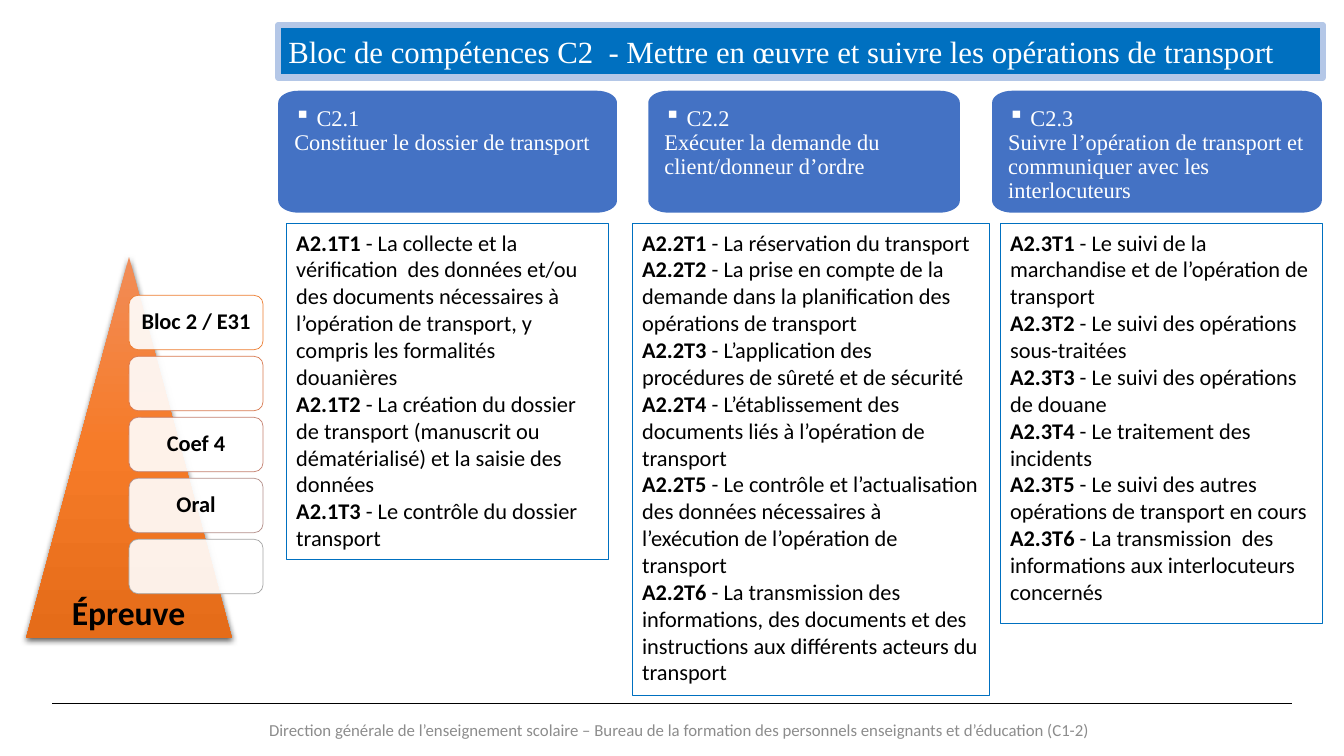
import math

from lxml import etree
from pptx import Presentation
from pptx.dml.color import RGBColor
from pptx.enum import shapes, text
from pptx.oxml import parse_xml
from pptx.oxml.ns import nsdecls, qn
from pptx.util import Inches, Pt

TITLE = "Bloc de compétences C2  - Mettre en œuvre et suivre les opérations de transport"
FOOTER = ("Direction générale de l’enseignement scolaire – Bureau de la formation "
          "des personnels enseignants et d’éducation (C1-2)")
# code, heading, card (left, width), task box (left, width, height), tasks
COLUMNS = [
    ("2.1", "Constituer le dossier de transport", (2.76, 3.36), (2.84, 3.2, 3.33), [
        "La collecte et la vérification  des données et/ou des documents nécessaires à "
        "l’opération de transport, y compris les formalités douanières",
        "La création du dossier de transport (manuscrit ou dématérialisé) et la saisie des données",
        "Le contrôle du dossier transport",
    ]),
    ("2.2", "Exécuter la demande du client/donneur d’ordre", (6.43, 3.09), (6.27, 3.54, 4.68), [
        "La réservation du transport",
        "La prise en compte de la demande dans la planification des opérations de transport",
        "L’application des procédures de sûreté et de sécurité",
        "L’établissement des documents liés à l’opération de transport",
        "Le contrôle et l’actualisation des données nécessaires à l’exécution de "
        "l’opération de transport",
        "La transmission des informations, des documents et des instructions aux "
        "différents acteurs du transport",
    ]),
    ("2.3", "Suivre l’opération de transport et communiquer avec les interlocuteurs",
     (9.84, 3.27), (9.92, 3.2, 3.97), [
        "Le suivi de la marchandise et de l’opération de transport",
        "Le suivi des opérations sous-traitées",
        "Le suivi des opérations de douane",
        "Le traitement des incidents",
        "Le suivi des autres opérations de transport en cours",
        "La transmission  des informations aux interlocuteurs concernés",
    ]),
]
BADGES = [
    ("Bloc 2 / E31", RGBColor(0xED, 0x7D, 0x31)),
    ("", RGBColor(0xD8, 0x7A, 0x51)),
    ("Coef 4", RGBColor(0xC4, 0x81, 0x70)),
    ("Oral", RGBColor(0xB4, 0x90, 0x8B)),
    ("", RGBColor(0xA5, 0xA5, 0xA5)),
]
BLACK = RGBColor(0, 0, 0)
WHITE = RGBColor(0xFF, 0xFF, 0xFF)
GREY = RGBColor(0x8C, 0x8C, 0x8C)
CARD_BLUE = RGBColor(0x44, 0x72, 0xC4)
BLUE = RGBColor(0x00, 0x70, 0xC0)
PALE_BLUE = RGBColor(0xB4, 0xC7, 0xE7)
TRIANGLE_STOPS = [(0, "F18C57"), (50, "F67B28"), (100, "E56C19")]
SERIF, SANS = "Times New Roman", "Calibri"
CARD_TOP, CARD_HEIGHT, CORNER = 0.9, 1.21, (0.2, 0.12)
TASKS_TOP = 2.22
BADGE_LEFT, BADGE_TOP, BADGE_STEP, BADGE_SIZE = 1.28, 2.93, 0.605, (1.33, 0.54)


def inches(*lengths):
    return [Inches(length) for length in lengths]


def add_run(paragraph, words, size, font, color, bold=False):
    run = paragraph.add_run()
    run.text = words
    run.font.size, run.font.name, run.font.bold = Pt(size), font, bold
    run.font.color.rgb = color


def set_frame(shape, anchor, margins=(0.1, 0.05, 0.1, 0.05)):
    """Wrap and anchor the text; margins run left, top, right, bottom."""
    frame = shape.text_frame
    frame.word_wrap = True
    frame.auto_size = text.MSO_AUTO_SIZE.NONE
    frame.vertical_anchor = anchor
    (frame.margin_left, frame.margin_top,
     frame.margin_right, frame.margin_bottom) = inches(*margins)
    return frame


def add_preset(slide, preset, *box):
    shape = slide.shapes.add_shape(preset, *inches(*box))
    shape.shadow.inherit = False
    return shape


def add_label(slide, box, words, size, color, bold=False):
    label = slide.shapes.add_textbox(*inches(*box))
    paragraph = set_frame(label, text.MSO_ANCHOR.MIDDLE).paragraphs[0]
    paragraph.alignment = text.PP_ALIGN.CENTER
    add_run(paragraph, words, size, SANS, color, bold)


def format_title(title):
    title.left, title.top, title.width, title.height = inches(2.76, 0.25, 10.36, 0.52)
    title._element.spPr.append(parse_xml(
        f'<a:prstGeom {nsdecls("a")} prst="roundRect"><a:avLst/></a:prstGeom>'))
    title.fill.solid()
    title.fill.fore_color.rgb = BLUE
    title.line.color.rgb, title.line.width = PALE_BLUE, Pt(4.5)
    paragraph = set_frame(title, text.MSO_ANCHOR.MIDDLE).paragraphs[0]
    paragraph.alignment = text.PP_ALIGN.LEFT
    add_run(paragraph, TITLE, 22, SERIF, WHITE)


def card_outline(left, width, steps=8):
    """Corner points of a card whose corners are quarter ellipses."""
    radius_x, radius_y = CORNER
    centres_x = (left + width - radius_x, left + radius_x)
    centres_y = (CARD_TOP + CARD_HEIGHT - radius_y, CARD_TOP + radius_y)
    points = []
    for corner in range(4):
        centre_x = centres_x[corner in (1, 2)]
        centre_y = centres_y[corner >= 2]
        for step in range(steps + 1):
            angle = math.pi / 2 * (corner + step / steps)
            points.append((Inches(centre_x + radius_x * math.cos(angle)),
                           Inches(centre_y + radius_y * math.sin(angle))))
    return points


def add_card(slide, code, heading, left, width):
    points = card_outline(left, width)
    builder = slide.shapes.build_freeform(*points[0])
    builder.add_line_segments(points[1:], close=True)
    card = builder.convert_to_shape()
    card.shadow.inherit = False
    card.fill.solid()
    card.fill.fore_color.rgb = CARD_BLUE
    card.line.fill.background()
    frame = set_frame(card, text.MSO_ANCHOR.TOP, (0.16, 0.16, 0.16, 0.51))
    paragraph = frame.paragraphs[0]
    paragraph.alignment = text.PP_ALIGN.LEFT
    paragraph.line_spacing = 0.9
    etree.SubElement(paragraph._p.get_or_add_pPr(), qn("a:buChar"), char="▪")
    add_run(paragraph, f" C{code}", 16, SERIF, WHITE)
    paragraph.add_line_break()
    add_run(paragraph, heading, 16, SERIF, WHITE)


def add_tasks(slide, code, tasks, left, width, height):
    box = add_preset(slide, shapes.MSO_SHAPE.RECTANGLE, left, TASKS_TOP, width, height)
    box.fill.background()
    box.line.color.rgb, box.line.width = BLUE, Pt(0.75)
    frame = set_frame(box, text.MSO_ANCHOR.TOP)
    for number, task in enumerate(tasks, 1):
        paragraph = frame.paragraphs[0] if number == 1 else frame.add_paragraph()
        paragraph.alignment = text.PP_ALIGN.LEFT
        add_run(paragraph, f"A{code}T{number}", 16, SANS, BLACK, True)
        add_run(paragraph, f" - {task}", 16, SANS, BLACK)


def add_triangle(slide):
    triangle = add_preset(slide, shapes.MSO_SHAPE.ISOSCELES_TRIANGLE, 0.26, 2.55, 2.04, 3.78)
    triangle.line.fill.background()
    stops = "".join(f'<a:gs pos="{share * 1000}"><a:srgbClr val="{color}"/></a:gs>'
                    for share, color in TRIANGLE_STOPS)
    properties = triangle._element.spPr
    properties.find(qn("a:prstGeom")).addnext(parse_xml(
        f'<a:gradFill {nsdecls("a")} rotWithShape="1"><a:gsLst>{stops}</a:gsLst>'
        '<a:lin ang="5400000" scaled="0"/></a:gradFill>'))
    properties.find(qn("a:effectLst")).append(parse_xml(
        f'<a:outerShdw {nsdecls("a")} blurRad="{Pt(4.5)}" dist="{Pt(1.5)}" dir="5400000" '
        'algn="ctr" rotWithShape="0"><a:srgbClr val="000000"><a:alpha val="63000"/>'
        '</a:srgbClr></a:outerShdw>'))


def add_badge(slide, row, words, border):
    badge = add_preset(slide, shapes.MSO_SHAPE.ROUNDED_RECTANGLE,
                       BADGE_LEFT, BADGE_TOP + row * BADGE_STEP, *BADGE_SIZE)
    badge.fill.solid()
    badge.fill.fore_color.rgb = WHITE
    color = badge._element.spPr.find(qn("a:solidFill"))[0]
    etree.SubElement(color, qn("a:alpha"), val="90000")
    badge.line.color.rgb, badge.line.width = border, Pt(0.5)
    if words:
        frame = set_frame(badge, text.MSO_ANCHOR.MIDDLE, (0.08,) * 4)
        paragraph = frame.paragraphs[0]
        paragraph.alignment = text.PP_ALIGN.CENTER
        paragraph.line_spacing = 0.9
        add_run(paragraph, words, 16, SANS, BLACK, True)


def main():
    presentation = Presentation()
    presentation.slide_width, presentation.slide_height = inches(13.33, 7.5)
    slide = presentation.slides.add_slide(presentation.slide_layouts[5])
    format_title(slide.shapes.title)
    rule = slide.shapes.add_connector(shapes.MSO_CONNECTOR.STRAIGHT,
                                      *inches(0.52, 6.98, 12.81, 6.98))
    rule.line.color.rgb, rule.line.width = BLACK, Pt(0.8)
    etree.SubElement(rule._element.spPr, qn("a:effectLst"))
    add_label(slide, (0.52, 6.98, 12.44, 0.52), FOOTER, 12, GREY)
    for code, heading, card, box, tasks in COLUMNS:
        add_card(slide, code, heading, *card)
        add_tasks(slide, code, tasks, *box)
    add_triangle(slide)
    for row, (words, border) in enumerate(BADGES):
        add_badge(slide, row, words, border)
    add_label(slide, (0.34, 5.82, 1.87, 0.5), "Épreuve", 24, BLACK, True)
    presentation.save("out.pptx")


if __name__ == "__main__":
    main()
